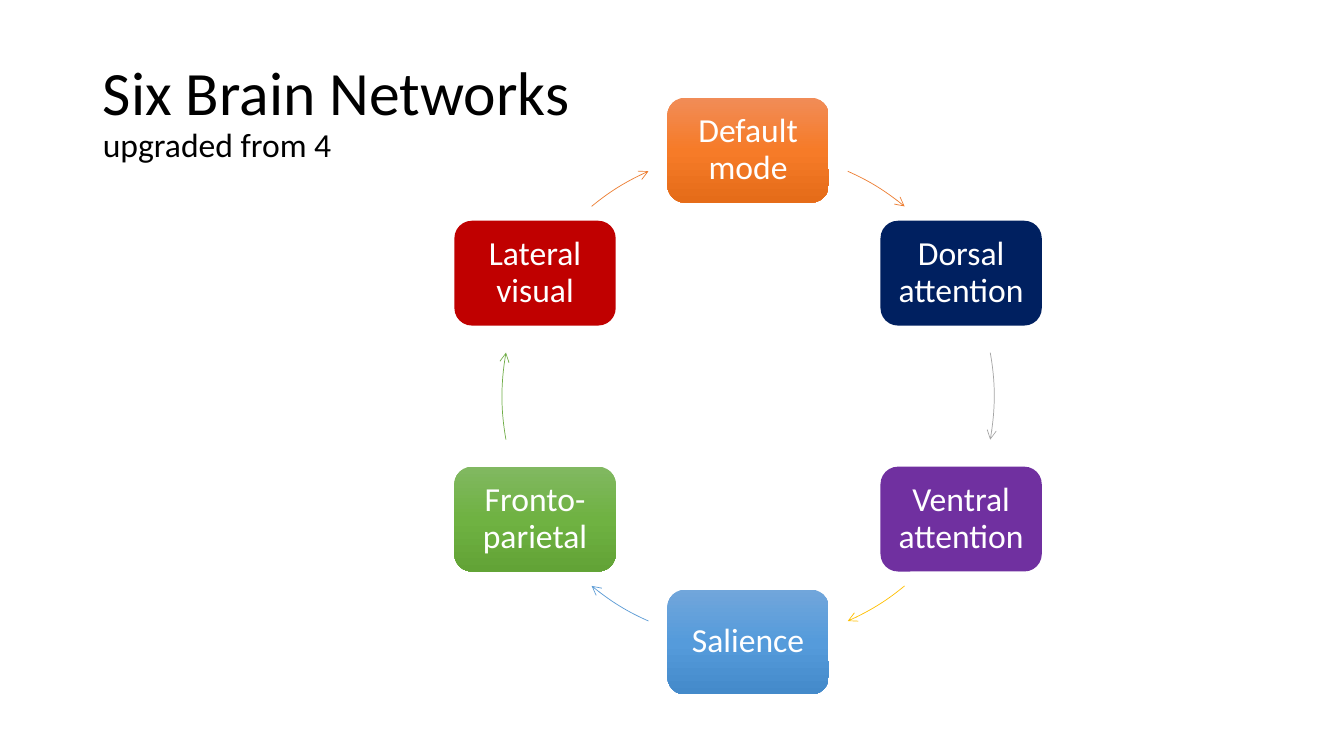
from copy import deepcopy
from math import cos, radians, sin, tan

from lxml import etree
from pptx import Presentation
from pptx.dml.color import RGBColor
from pptx.enum.shapes import MSO_SHAPE
from pptx.enum.text import MSO_ANCHOR, PP_ALIGN
from pptx.oxml.ns import qn
from pptx.util import Inches, Pt

ROUNDED = MSO_SHAPE.ROUNDED_RECTANGLE
MIDDLE = MSO_ANCHOR.MIDDLE
LEFT = PP_ALIGN.LEFT
CENTER = PP_ALIGN.CENTER

BLACK = RGBColor(0x00, 0x00, 0x00)
WHITE = RGBColor(0xFF, 0xFF, 0xFF)
NAVY = RGBColor(0x00, 0x20, 0x60)
PURPLE = RGBColor(0x70, 0x30, 0xA0)
RED = RGBColor(0xC0, 0x00, 0x00)
ORANGE_LINE = RGBColor(0xED, 0x7D, 0x31)
GRAY_LINE = RGBColor(0xA5, 0xA5, 0xA5)
GOLD_LINE = RGBColor(0xFF, 0xC0, 0x00)
BLUE_LINE = RGBColor(0x5B, 0x9B, 0xD5)
GREEN_LINE = RGBColor(0x70, 0xAD, 0x47)
ORANGES = (RGBColor(0xF1, 0x8C, 0x57), RGBColor(0xF6, 0x7B, 0x28), RGBColor(0xE5, 0x6C, 0x19))
BLUES = (RGBColor(0x71, 0xA6, 0xDB), RGBColor(0x55, 0x9B, 0xDB), RGBColor(0x44, 0x8A, 0xCA))
GREENS = (RGBColor(0x81, 0xB8, 0x61), RGBColor(0x6F, 0xB2, 0x42), RGBColor(0x62, 0xA3, 0x36))

CENTER_X, CENTER_Y, RADIUS = 7.42, 3.93, 2.44
NODE_WIDTH, NODE_HEIGHT = 1.6, 1.04

NETWORKS = [
    ("Default mode", ORANGES),
    ("Dorsal attention", (NAVY,)),
    ("Ventral attention", (PURPLE,)),
    ("Salience", BLUES),
    ("Fronto-parietal", GREENS),
    ("Lateral visual", (RED,)),
]
ARROWS = [
    (-66.1, -50.5, ORANGE_LINE),
    (-10.2, 10.2, GRAY_LINE),
    (50.5, 66.1, GOLD_LINE),
    (113.9, 129.5, BLUE_LINE),
    (169.8, 190.2, GREEN_LINE),
    (230.5, 246.1, ORANGE_LINE),
]


def set_attributes(target, values):
    for name, value in values.items():
        setattr(target, name, value)


def style_font(font, size, color):
    set_attributes(font, {"name": "Calibri", "size": Pt(size)})
    font.color.rgb = color


def ring_point(angle, handle=0):
    turn = radians(angle)
    x = CENTER_X + RADIUS * (cos(turn) - handle * sin(turn))
    y = CENTER_Y + RADIUS * (sin(turn) + handle * cos(turn))
    return x, y


def fill_shape(shape, colors):
    if len(colors) == 1:
        shape.fill.solid()
        shape.fill.fore_color.rgb = colors[0]
        return
    shape.fill.gradient()
    shape.fill.gradient_angle = 270
    stop_list = shape._element.spPr.find(qn("a:gradFill")).find(qn("a:gsLst"))
    stop_list.insert(1, deepcopy(stop_list[0]))
    for index, stop in enumerate(shape.fill.gradient_stops):
        stop.position = index / 2
        stop.color.rgb = colors[index]


def add_title(slide):
    title = slide.shapes.title
    set_attributes(title, {
        "left": Inches(0.92), "top": Inches(0.4),
        "width": Inches(4.93), "height": Inches(1.45),
    })
    set_attributes(title.text_frame, {"vertical_anchor": MIDDLE, "word_wrap": True})
    paragraph = title.text_frame.paragraphs[0]
    set_attributes(paragraph, {"alignment": LEFT, "line_spacing": 0.9})
    heading = paragraph.add_run()
    heading.text = "Six Brain Networks"
    style_font(heading.font, 44, BLACK)
    paragraph.add_line_break()
    subheading = paragraph.add_run()
    subheading.text = "upgraded from 4"
    style_font(subheading.font, 24, BLACK)


def add_network(slide, label, colors, angle):
    x, y = ring_point(angle)
    shape = slide.shapes.add_shape(
        ROUNDED, Inches(x - NODE_WIDTH / 2), Inches(y - NODE_HEIGHT / 2),
        Inches(NODE_WIDTH), Inches(NODE_HEIGHT))
    shape.shadow.inherit = False
    fill_shape(shape, colors)
    shape.line.fill.background()
    frame = shape.text_frame
    set_attributes(frame, {
        "word_wrap": True, "vertical_anchor": MIDDLE,
        "margin_left": Inches(0.1), "margin_right": Inches(0.1),
        "margin_top": Inches(0.1), "margin_bottom": Inches(0.1),
    })
    paragraph = frame.paragraphs[0]
    set_attributes(paragraph, {"alignment": CENTER, "line_spacing": 0.9})
    run = paragraph.add_run()
    run.text = label
    style_font(run.font, 24, WHITE)


def draw_curve(shape, points):
    path = next(shape._element.iter(qn("a:path")))
    for child in list(path):
        path.remove(child)
    path.set("w", str(shape.width))
    path.set("h", str(shape.height))
    move = etree.SubElement(path, qn("a:moveTo"))
    curve = etree.SubElement(path, qn("a:cubicBezTo"))
    for parent, (x, y) in zip((move, curve, curve, curve), points):
        etree.SubElement(parent, qn("a:pt"), x=str(Inches(x) - shape.left),
                         y=str(Inches(y) - shape.top))


def add_arc_arrow(slide, start, end, color):
    left, top = CENTER_X - RADIUS, CENTER_Y - RADIUS
    builder = slide.shapes.build_freeform(Inches(left), Inches(top))
    builder.add_line_segments(
        [(Inches(left + 2 * RADIUS), Inches(top + 2 * RADIUS))], close=False)
    arrow = builder.convert_to_shape()
    handle = 4 / 3 * tan(radians(end - start) / 4)
    draw_curve(arrow, [ring_point(start), ring_point(start, handle),
                       ring_point(end, -handle), ring_point(end)])
    arrow.shadow.inherit = False
    arrow.fill.background()
    arrow.line.width = Pt(0.5)
    arrow.line.color.rgb = color
    line = arrow._element.spPr.find(qn("a:ln"))
    etree.SubElement(line, qn("a:tailEnd"), type="arrow")


def main():
    presentation = Presentation()
    presentation.slide_width = Inches(13.33)
    presentation.slide_height = Inches(7.5)
    slide = presentation.slides.add_slide(presentation.slide_layouts[5])
    add_title(slide)
    for index, (network, arrow) in enumerate(zip(NETWORKS, ARROWS)):
        add_network(slide, *network, angle=60 * index - 90)
        add_arc_arrow(slide, *arrow)
    presentation.save("out.pptx")


if __name__ == "__main__":
    main()
